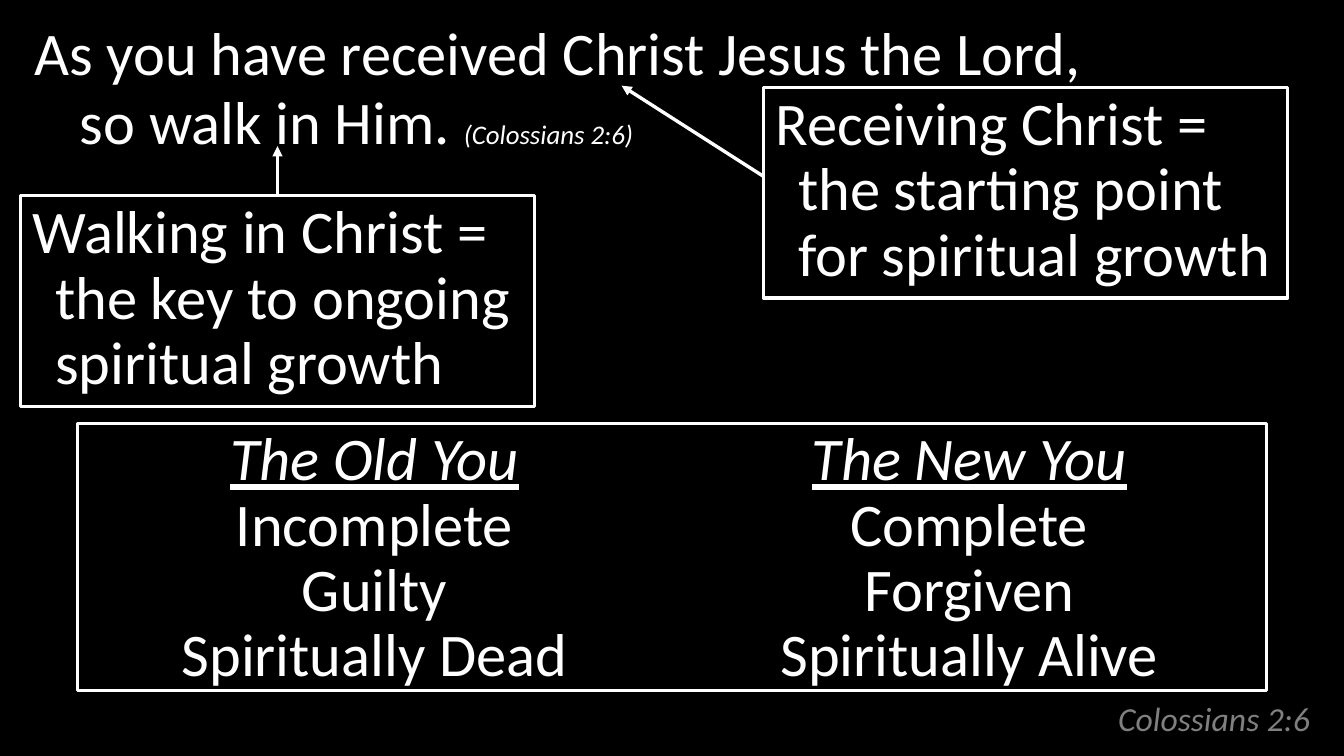
from lxml import etree
from pptx import Presentation
from pptx.dml.color import RGBColor
from pptx.enum import shapes, text
from pptx.oxml import ns
from pptx.util import Pt

# Content
VERSE = ["As you have received Christ Jesus the Lord, ", "so walk in Him. "]
CITE = "(Colossians 2:6)"
FOOTER = "Colossians 2:6"
# Callouts: text, box, arrow start, arrow tip, joined side
NOTES = [
    ("Receiving Christ = the starting point for spiritual growth",
     (454.5, 52, 312, 125.5), (454.5, 105), (370, 51), None),
    ("Walking in Christ = the key to ongoing spiritual growth",
     (12.2, 116.5, 306, 125.5), (165.2, 116.5), (165.2, 87), 0),
]
COLS = [
    ("The Old You", "Incomplete", "Guilty", "Spiritually Dead"),
    ("The New You", "Complete", "Forgiven", "Spiritually Alive"),
]
FRAME = (46, 252, 708, 159)
WHITE, BLACK, GRAY = "FFFFFF", "000000", "808080"
LEFT, MID, RIGHT = text.PP_ALIGN.LEFT, text.PP_ALIGN.CENTER, text.PP_ALIGN.RIGHT


def paint(target, color):
    target.solid()
    target.fore_color.rgb = RGBColor.from_string(color)


def pts(nums):
    return [Pt(n) for n in nums]


def add_run(para, words, size=36, color=WHITE, italic=False, under=False):
    run = para.add_run()
    run.text = words
    font = run.font
    font.name, font.size = "Calibri", Pt(size)
    font.italic, font.underline = italic, under
    paint(font.fill, color)


def style(para, align=LEFT, space=0.9, hang=13.5):
    para.alignment, para.line_spacing = align, space
    props = para._p.get_or_add_pPr()
    props.set("marL", str(Pt(hang)))
    props.set("indent", str(-Pt(hang)))
    return para


def add_text(box, anchor=text.MSO_ANCHOR.TOP):
    frame = slide.shapes.add_textbox(*pts(box)).text_frame
    frame.word_wrap, frame.vertical_anchor = True, anchor
    return frame


def add_box(box, fill=None):
    rect = slide.shapes.add_shape(shapes.MSO_SHAPE.RECTANGLE, *pts(box))
    rect.shadow.inherit = False
    if fill:
        paint(rect.fill, fill)
    else:
        rect.fill.background()
    paint(rect.line.fill, WHITE)
    rect.line.width = Pt(2)
    return rect


def add_arrow(start, tip):
    arrow = slide.shapes.add_connector(
        shapes.MSO_CONNECTOR.STRAIGHT, *pts(start + tip))
    paint(arrow.line.fill, WHITE)
    arrow.line.width = Pt(2)
    head = etree.SubElement(arrow.line._get_or_add_ln(), ns.qn("a:tailEnd"))
    head.set("type", "triangle")
    etree.SubElement(arrow._element.spPr, ns.qn("a:effectLst"))
    return arrow


prs = Presentation()
prs.slide_width, prs.slide_height = Pt(800), Pt(450)
slide = prs.slides.add_slide(prs.slide_layouts[6])
paint(slide.background.fill, BLACK)

# Frame and footer
add_box(FRAME)
foot = add_text((508.5, 400.5, 278.5, 42.5), text.MSO_ANCHOR.BOTTOM)
add_run(style(foot.paragraphs[0], RIGHT, 0.8, 0), FOOTER, 20, GRAY, True)

# Verse
verse = style(add_text((13.5, 8.5, 773, 90)).paragraphs[0], LEFT, 0.95, 27)
add_run(verse, VERSE[0])
verse.add_line_break()
add_run(verse, VERSE[1])
add_run(verse, CITE, 16, italic=True)

# Old and new columns
x, y, width, height = FRAME
half = width / len(COLS)
for i, rows in enumerate(COLS):
    frame = add_text((x + i * half, y - 0.5, half, height))
    for j, words in enumerate(rows):
        para = frame.add_paragraph() if j else frame.paragraphs[0]
        add_run(style(para, MID), words, italic=j == 0, under=j == 0)

# Callouts with arrows
for words, box, start, tip, side in NOTES:
    note = add_box(box, BLACK)
    note.text_frame.word_wrap = True
    note.text_frame.vertical_anchor = text.MSO_ANCHOR.TOP
    add_run(style(note.text_frame.paragraphs[0]), words)
    arrow = add_arrow(start, tip)
    if side is not None:
        arrow.begin_connect(note, side)

prs.save("out.pptx")
